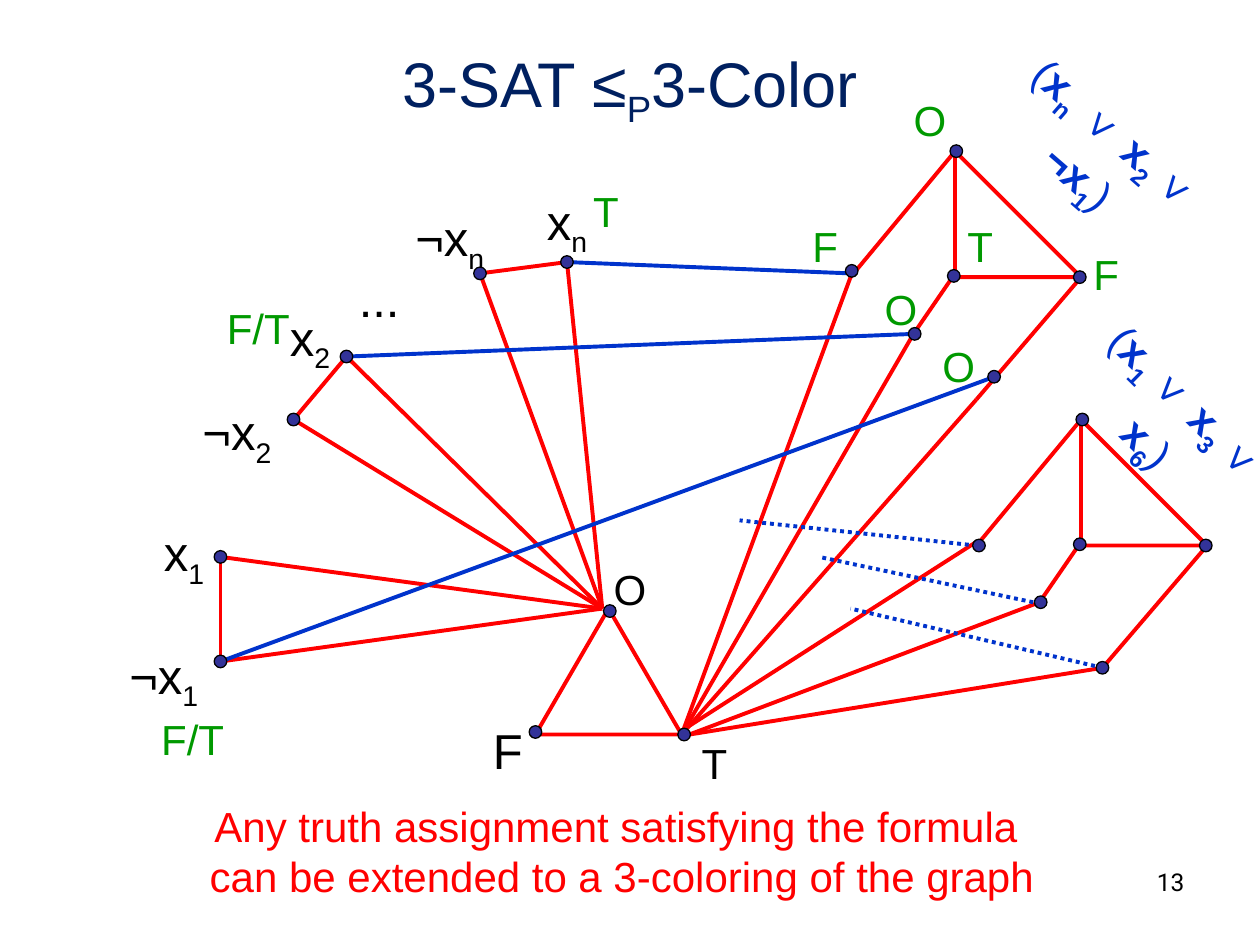
from lxml import etree
from pptx import Presentation
from pptx.dml.color import RGBColor
from pptx.enum.dml import MSO_LINE
from pptx.enum.shapes import MSO_CONNECTOR, MSO_SHAPE
from pptx.enum.text import MSO_ANCHOR, MSO_AUTO_SIZE, PP_ALIGN
from pptx.oxml.ns import qn
from pptx.util import Inches, Pt

STRAIGHT = MSO_CONNECTOR.STRAIGHT
OVAL = MSO_SHAPE.OVAL
TRIANGLE = MSO_SHAPE.ISOSCELES_TRIANGLE
RIGHT_TRIANGLE = MSO_SHAPE.RIGHT_TRIANGLE
DOTTED = MSO_LINE.ROUND_DOT
TOP, MIDDLE = MSO_ANCHOR.TOP, MSO_ANCHOR.MIDDLE
CENTER, RIGHT = PP_ALIGN.CENTER, PP_ALIGN.RIGHT
FIT_SHAPE, NO_FIT = MSO_AUTO_SIZE.SHAPE_TO_FIT_TEXT, MSO_AUTO_SIZE.NONE

BLACK = RGBColor(0, 0, 0)
NAVY = RGBColor(0x00, 0x20, 0x60)
RED = RGBColor(0xFF, 0, 0)
BLUE = RGBColor(0x00, 0x33, 0xCC)
GREEN = RGBColor(0x00, 0x99, 0x00)
INDIGO = RGBColor(0x33, 0x33, 0x99)

PALETTE = (4.25, 4.83)
VARIABLES = (0.93, 1.42)
GADGETS = ((6.75, 1.2), (7.75, 3.33))

# Literal vertices and the hub they all join, relative to VARIABLES
HUB = (3.85, 3.41)
LITERALS = {"¬x1": (0.82, 3.83), "x1": (0.82, 3), "¬x2": (1.4, 1.91),
            "x2": (1.82, 1.41), "¬xn": (2.88, 0.75), "xn": (3.57, 0.66)}


def shift(box, point):
    return box[0] + point[0], box[1] + point[1]


def write(p, text, size, color, font="Arial"):
    """Fill a paragraph; underscores switch subscript on and off."""
    for i, part in enumerate(text.split("_")):
        if not part:
            continue
        r = p.add_run()
        r.text = part
        r.font.size, r.font.name = Pt(size), font
        r.font.color.rgb = color
        if i % 2:
            r._r.get_or_add_rPr().set("baseline", "-25000")


def add_label(s, box, at, width, text, size=24, color=GREEN, height=0.5):
    x, y = shift(box, at)
    if size == 28:
        height = 0.57
    sp = s.shapes.add_textbox(Inches(x), Inches(y), Inches(width), Inches(height))
    tf = sp.text_frame
    tf.word_wrap, tf.auto_size, tf.vertical_anchor = False, FIT_SHAPE, MIDDLE
    for i, line in enumerate(text.split("\n")):
        p = tf.add_paragraph() if i else tf.paragraphs[0]
        p.alignment = CENTER
        write(p, line, size, color)
    return sp


def add_edge(s, start, end, color=RED, dash=None):
    c = s.shapes.add_connector(STRAIGHT, *map(Inches, (*start, *end)))
    c.line.color.rgb, c.line.width = color, Pt(2.25)
    if dash:
        c.line.dash_style = dash
    etree.SubElement(c._element.spPr, qn("a:effectLst"))


def add_outline(s, kind, at, width, height):
    sp = s.shapes.add_shape(kind, *map(Inches, (*at, width, height)))
    sp.shadow.inherit = False
    sp.fill.background()
    sp.line.color.rgb, sp.line.width = RED, Pt(2.25)


def add_vertices(s, box, points, size=0.1):
    for point in points:
        x, y = shift(box, point)
        sp = s.shapes.add_shape(OVAL, Inches(x - size / 2), Inches(y - size / 2),
                                Inches(size), Inches(size))
        sp.shadow.inherit = False
        sp.fill.solid()
        sp.fill.fore_color.rgb = INDIGO
        sp.line.color.rgb, sp.line.width = BLACK, Pt(0.75)


def add_title(s, left, top, width, height):
    sp = s.shapes.title
    sp.left, sp.top, sp.width, sp.height = map(Inches, (left, top, width, height))
    tf = sp.text_frame
    tf.vertical_anchor, tf.auto_size = TOP, NO_FIT
    tf.paragraphs[0].alignment = CENTER
    write(tf.paragraphs[0], "3-SAT ≤_P_3-Color", 36, NAVY)


def add_page_number(s, left, top, width, height):
    sp = s.shapes.add_textbox(*map(Inches, (left, top, width, height)))
    sp.text_frame.word_wrap = True
    p = sp.text_frame.paragraphs[0]
    p.alignment = RIGHT
    write(p, "13", 14, BLACK, "Roboto")


def add_palette(s, box):
    """Triangle of the three colours O, F and T."""
    add_label(s, box, (0.52, -0.41), 0.46, "O", color=BLACK)
    add_label(s, box, (1.22, 0.97), 0.4, "T", color=BLACK)
    add_label(s, box, (-0.44, 0.84), 0.44, "F", 28, BLACK)
    add_outline(s, TRIANGLE, box, 1.16, 1)


def add_variables(s, box):
    for text, at, width in (
            ("x_1", (0.26, 2.71), 0.54), ("¬x_1", (-0.04, 3.68), 0.82),
            ("x_2", (1.26, 1), 0.54), ("¬x_2", (0.54, 1.75), 0.82),
            ("x_n", (3.3, 0.08), 0.54), ("¬x_n", (2.23, 0.21), 0.82),
            ("...", (1.73, 0.66), 0.7)):
        add_label(s, box, at, width, text, 28, BLACK)
    for text, at, width in (("T", (3.68, 0), 0.4), ("F/T", (0.77, 0.93), 0.7),
                            ("F/T", (0.25, 4.19), 0.7)):
        add_label(s, box, at, width, text)
    for name in ("x1", "x2", "xn"):
        add_edge(s, shift(box, LITERALS[name]), shift(box, LITERALS["¬" + name]))
    for point in LITERALS.values():
        add_edge(s, shift(box, point), shift(box, HUB))


def add_gadget(s, box):
    """Clause gadget: a triangle with three legs."""
    add_outline(s, RIGHT_TRIANGLE, shift(box, (0.83, 0)), 1, 1)
    for start, end in (((0.83, 0), (0, 1)), ((0.83, 0.97), (0.5, 1.45)),
                       ((1.83, 1), (1, 1.97))):
        add_edge(s, shift(box, start), shift(box, end))


def add_gadget_colors(s, box):
    for text, at in (("F", (-0.4, 0.5)), ("T", (0.83, 0.5)), ("F", (1.83, 0.72)),
                     ("O", (0.17, 1)), ("O", (0.63, 1.45)), ("O", (0.4, -0.5))):
        add_label(s, box, at, 0.46 if text == "O" else 0.4, text)


def add_gadget_vertices(s, box, left, right):
    add_vertices(s, box, [(0.84, 0), (0.82, 0.99), (1.82, 1), (0.51, 1.45), left, right])


def add_clause(s, at, width, rotation, text):
    sp = add_label(s, at, (0, 0), width, text, color=BLUE)
    sp.rotation = rotation
    for r in sp.text_frame.paragraphs[0].runs:
        r.font.bold = r.text not in "()"


def add_links(s):
    """Join the gadgets to T in red and to their literals in blue."""
    for start, end in (((5.41, 5.83), (6.75, 2.2)), ((5.41, 5.83), (7.25, 2.65)),
                       ((5.41, 5.83), (7.75, 3.17)), ((5.41, 5.8), (7.75, 4.3)),
                       ((5.47, 5.83), (8.25, 4.78)), ((5.47, 5.83), (8.75, 5.3))):
        add_edge(s, start, end)
    for start, end in (((7.75, 4.33), (5.87, 4.13)), ((8.2, 4.78), (6.5, 4.42)),
                       ((8.75, 5.3), (6.75, 4.83))):
        add_edge(s, start, end, BLUE, DOTTED)
    for start, name in (((7.92, 2.98), "¬x1"), ((7.25, 2.65), "x2"),
                        ((6.75, 2.17), "xn")):
        add_edge(s, start, shift(VARIABLES, LITERALS[name]), BLUE)


def main():
    prs = Presentation()
    prs.slide_width, prs.slide_height = Inches(10), Inches(7.5)
    s = prs.slides.add_slide(prs.slide_layouts[5])
    add_title(s, 0.5, 0.3, 9, 1.25)
    add_page_number(s, 7.17, 6.83, 2.33, 0.52)
    add_label(s, (1.56, 6.3), (0, 0), 6.75,
              "Any truth assignment satisfying the formula \n"
              "can be extended to a 3-coloring of the graph", color=RED, height=0.9)
    add_gadget_colors(s, GADGETS[0])
    add_palette(s, PALETTE)
    add_variables(s, VARIABLES)
    for box in GADGETS:
        add_gadget(s, box)
    add_clause(s, (7.52, 1), 2.36, 40.9, "(__x_n_ ∨ x_2 _∨ ¬x_1_)")
    add_links(s)
    add_vertices(s, PALETTE, [(0.59, 0.02), (0, 0.98), (1.18, 1)])
    add_vertices(s, VARIABLES, LITERALS.values())
    add_gadget_vertices(s, GADGETS[0], (0.01, 0.95), (1.14, 1.79))
    add_gadget_vertices(s, GADGETS[1], (0.02, 1), (1, 1.97))
    add_clause(s, (8.22, 3.12), 2.06, 44.6, "(__x_1 _∨ x_3 _∨ x_6_)")
    prs.save("out.pptx")


if __name__ == "__main__":
    main()
